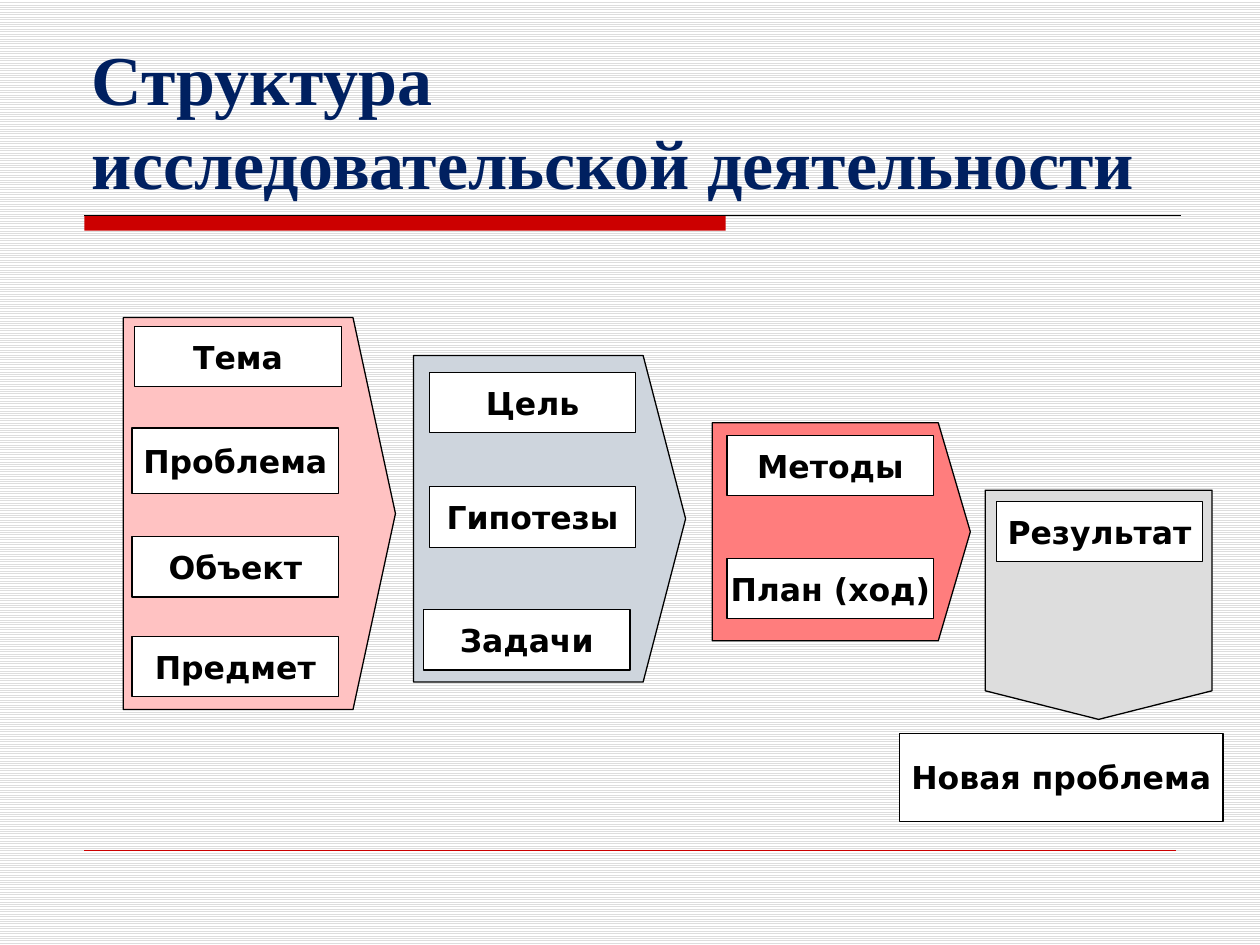
"""Build a slide showing the structure of research activity."""
import pptx
import pptx.dml.color
import pptx.enum.dml
import pptx.enum.shapes
import pptx.enum.text
import pptx.oxml
import pptx.oxml.ns
import pptx.util

Pt = pptx.util.Pt
RGBColor = pptx.dml.color.RGBColor
SHAPE = pptx.enum.shapes.MSO_SHAPE
ANCHOR = pptx.enum.text.MSO_ANCHOR

WHITE = RGBColor(0xFF, 0xFF, 0xFF)
BLACK = RGBColor(0, 0, 0)
NAVY = RGBColor(0x00, 0x20, 0x60)
RED = RGBColor(0xCC, 0, 0)
PINK = RGBColor(0xFF, 0xC2, 0xC2)
BLUE_GRAY = RGBColor(0xCE, 0xD5, 0xDD)
CORAL = RGBColor(0xFF, 0x7D, 0x7D)
LIGHT_GRAY = RGBColor(0xDD, 0xDD, 0xDD)

BOX_WIDTH, BOX_HEIGHT = 118, 34.5


def add_block(parent, kind, left, top, width, height, color, label=None):
    block = parent.add_shape(kind, Pt(left), Pt(top), Pt(width), Pt(height))
    block.shadow.inherit = False
    block.fill.solid()
    block.fill.fore_color.rgb = color
    block.line.color.rgb = BLACK
    block.line.width = Pt(0.75)
    if label:
        frame = block.text_frame
        frame.word_wrap = False
        frame.vertical_anchor = ANCHOR.MIDDLE
        paragraph = frame.paragraphs[0]
        paragraph.alignment = pptx.enum.text.PP_ALIGN.CENTER
        run = paragraph.add_run()
        run.text = label
        run.font.size = Pt(18)
        run.font.bold = True
        run.font.name = "DejaVu Sans"
        run.font.color.rgb = BLACK
    return block


deck = pptx.Presentation()
deck.slide_width, deck.slide_height = Pt(720), Pt(540)
slide = deck.slides.add_slide(deck.slide_layouts[6])

backdrop = slide.background.fill
backdrop.patterned()
backdrop.pattern = pptx.enum.dml.MSO_PATTERN.LIGHT_HORIZONTAL
backdrop.fore_color.rgb = LIGHT_GRAY
backdrop.back_color.rgb = WHITE

title_bar = add_block(slide.shapes, SHAPE.RECTANGLE, 48.2, 123.2, 366.5, 8.6, RED)
title_bar.line.fill.background()

for right, y, color, weight in [(674.7, 123.2, BLACK, 0.75), (672, 486, RED, 0.25)]:
    rule = slide.shapes.add_connector(
        pptx.enum.shapes.MSO_CONNECTOR.STRAIGHT, Pt(48.2), Pt(y), Pt(right), Pt(y))
    rule.line.color.rgb = color
    rule.line.width = Pt(weight)
    rule._element.spPr.append(
        pptx.oxml.parse_xml(f"<a:effectLst {pptx.oxml.ns.nsdecls('a')}/>"))

title = slide.shapes.add_textbox(Pt(45.4), Pt(23.8), Pt(630), Pt(95.8))
title.text_frame.word_wrap = True
title.text_frame.vertical_anchor = ANCHOR.BOTTOM
heading = title.text_frame.paragraphs[0]
for number, words in enumerate(["Структура", "исследовательской деятельности"]):
    if number:
        heading.add_line_break()
    run = heading.add_run()
    run.text = words
    run.font.size = Pt(40)
    run.font.bold = True
    run.font.name = "Times New Roman"
    run.font.color.rgb = NAVY

stages = [
    ((70.5, 181.5, 155.5, 224), PINK, 0.156, 0, [
        ("Тема", 77, 186.5, BOX_HEIGHT), ("Проблема", 75.5, 244.6, 37.5),
        ("Объект", 75.5, 306.7, BOX_HEIGHT), ("Предмет", 75.5, 363.7, BOX_HEIGHT)]),
    ((236.3, 203.2, 155.5, 186.5), BLUE_GRAY, 0.156, 0, [
        ("Цель", 245.3, 212.7, BOX_HEIGHT), ("Задачи", 242, 348.4, BOX_HEIGHT),
        ("Гипотезы", 245.3, 278.2, BOX_HEIGHT)]),
    ((407, 241.6, 147.5, 124.6), CORAL, 0.147, 0, [
        ("Методы", 415.5, 248.7, BOX_HEIGHT), ("План (ход)", 415.5, 319, BOX_HEIGHT)]),
    ((562.3, 280.8, 131, 129.6), LIGHT_GRAY, 0.126, 90, [
        ("Результат", 569.3, 286.5, BOX_HEIGHT)]),
]
for bounds, color, point, rotation, steps in stages:
    stage = slide.shapes.add_group_shape().shapes
    arrow = add_block(stage, SHAPE.PENTAGON, *bounds, color)
    arrow.adjustments[0] = point
    arrow.rotation = rotation
    for label, left, top, height in steps:
        add_block(stage, SHAPE.RECTANGLE, left, top, BOX_WIDTH, height, WHITE, label)

add_block(slide.shapes, SHAPE.RECTANGLE, 514, 419, 185, 50.5, WHITE, "Новая проблема")

deck.save("out.pptx")
